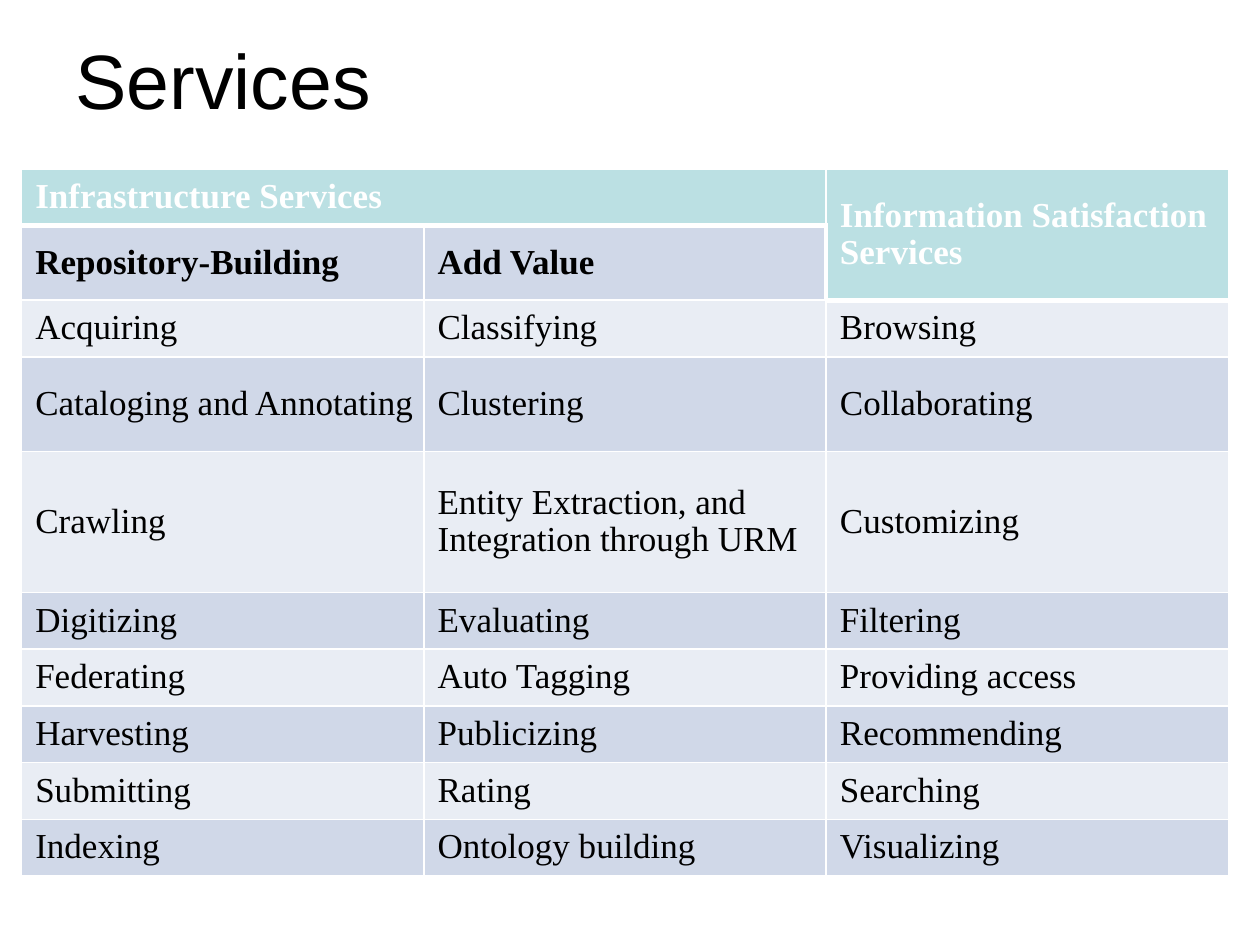
from pptx import Presentation
from pptx.dml.color import RGBColor
from pptx.enum.text import MSO_ANCHOR, PP_ALIGN
from pptx.oxml import parse_xml
from pptx.oxml.ns import nsdecls
from pptx.util import Inches, Pt

WHITE, BLACK = "FFFFFF", "000000"
HEADER_FILL, DARK_BAND, LIGHT_BAND = "BBE0E3", "D0D8E8", "E9EDF4"

ROWS = [
    ("Infrastructure Services", "", "Information Satisfaction Services"),
    ("Repository-Building", "Add Value", ""),
    ("Acquiring", "Classifying", "Browsing"),
    ("Cataloging and Annotating", "Clustering", "Collaborating"),
    ("Crawling", "Entity Extraction, and Integration through URM", "Customizing"),
    ("Digitizing", "Evaluating", "Filtering"),
    ("Federating", "Auto Tagging", "Providing access"),
    ("Harvesting", "Publicizing", "Recommending"),
    ("Submitting", "Rating", "Searching"),
    ("Indexing", "Ontology building", "Visualizing"),
]
ROW_HEIGHT = 0.45
TALL_ROWS = {3: 0.75, 4: 1.12}

# Sides drawn with the heavy rule around the header: (row, column) -> sides
HEAVY_SIDES = {
    (0, 0): "B", (0, 1): "B", (0, 2): "B",
    (1, 0): "T", (1, 1): "TR", (1, 2): "B",
    (2, 2): "T",
}


def color(value):
    return RGBColor.from_string(value)


def add_text(frame, text, font, size, fill, bold=False):
    para = frame.paragraphs[0]
    span = para.add_run()
    span.text = text
    span.font.name = font
    span.font.size = Pt(size)
    span.font.bold = bold
    span.font.color.rgb = color(fill)
    return para


def set_borders(cell, heavy):
    props = cell._tc.get_or_add_tcPr()
    for index, side in enumerate("LRTB"):
        width = Pt(3 if side in heavy else 1)
        props.insert(index, parse_xml(
            f'<a:ln{side} {nsdecls("a")} w="{width}"><a:solidFill>'
            f'<a:srgbClr val="{WHITE}"/></a:solidFill></a:ln{side}>'))


def format_cell(cell, text, row, column):
    is_header = row == 0 or (row == 1 and column == 2)
    band = DARK_BAND if row % 2 else LIGHT_BAND
    cell.fill.solid()
    cell.fill.fore_color.rgb = color(HEADER_FILL if is_header else band)
    cell.vertical_anchor = MSO_ANCHOR.MIDDLE
    cell.margin_left = cell.margin_right = Inches(0.07)
    cell.margin_top = cell.margin_bottom = 0
    set_borders(cell, HEAVY_SIDES.get((row, column), ""))
    if text:
        para = add_text(cell.text_frame, text, "Times New Roman", 20,
                        WHITE if is_header else BLACK, bold=row < 2)
        para.line_spacing = 0.96
        para._p.get_or_add_pPr().set("marL", str(Inches(0.04)))


def place_title(page, left, top, width, height):
    box = page.shapes.title
    box.left, box.top, box.width, box.height = left, top, width, height
    box.text_frame.vertical_anchor = MSO_ANCHOR.MIDDLE
    para = add_text(box.text_frame, "Services", "Arial", 44, BLACK)
    para.alignment = PP_ALIGN.LEFT


def place_services_table(page, left, top, width, height):
    table = page.shapes.add_table(len(ROWS), 3, left, top, width, height).table
    for column in table.columns:
        column.width = width // 3
    for row, texts in enumerate(ROWS):
        table.rows[row].height = Inches(TALL_ROWS.get(row, ROW_HEIGHT))
        for column, text in enumerate(texts):
            format_cell(table.cell(row, column), text, row, column)

    # Header spans: two columns on the left, two rows on the right
    table.cell(0, 0).merge(table.cell(0, 1))
    table.cell(0, 2).merge(table.cell(1, 2))


def main():
    deck = Presentation()
    deck.slide_width, deck.slide_height = Inches(10), Inches(7.5)
    page = deck.slides.add_slide(deck.slide_layouts[5])
    place_title(page, Inches(0.5), 0, Inches(9), Inches(1.25))
    place_services_table(page, Inches(0.17), Inches(1.34), Inches(9.58), Inches(5.5))
    deck.save("out.pptx")


if __name__ == "__main__":
    main()
